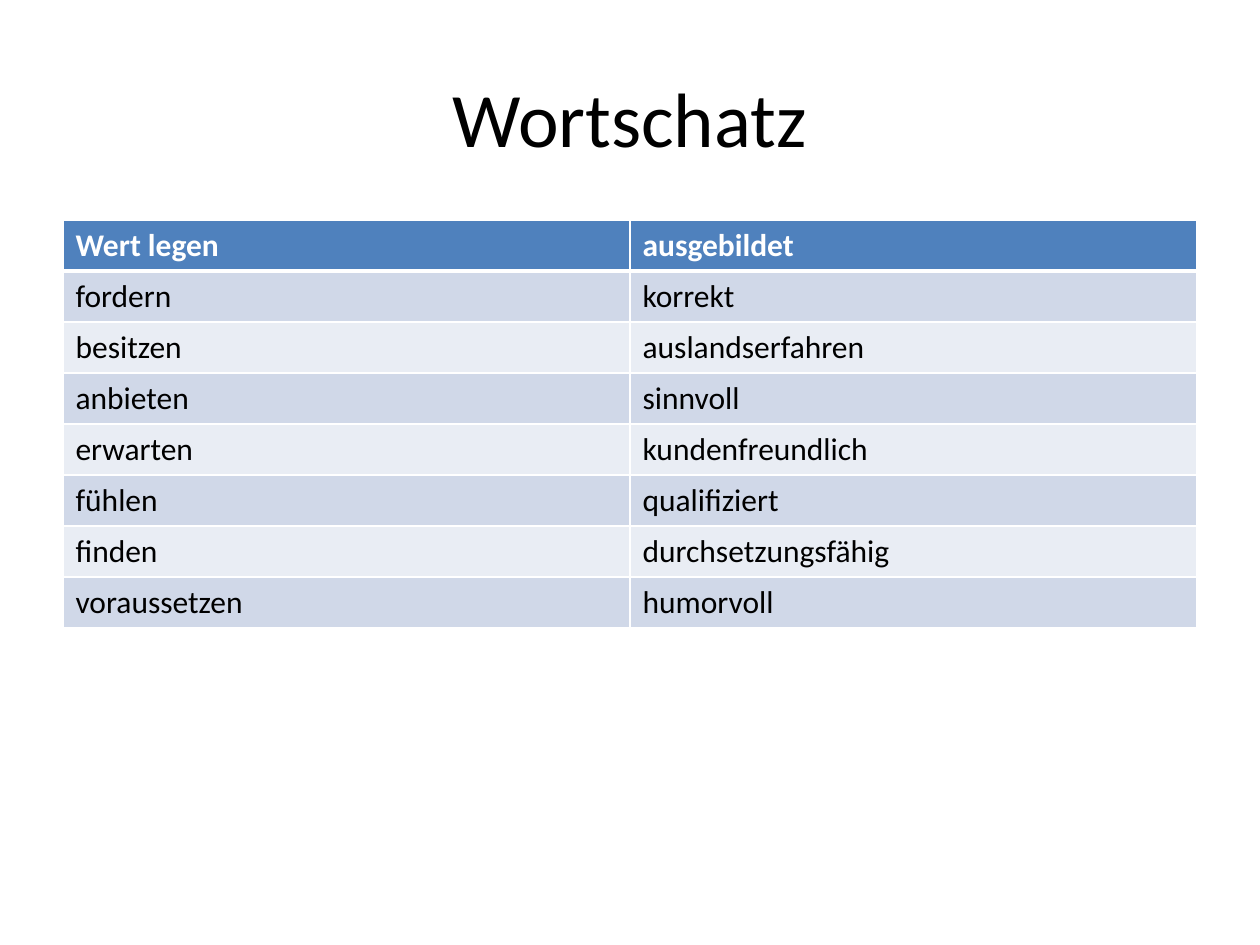
from dataclasses import dataclass

from lxml import etree
from pptx import Presentation
from pptx import util as u
from pptx.dml.color import RGBColor
from pptx.enum import text
from pptx.oxml.ns import qn

PX = 914400 / 126  # EMU per px


@dataclass(frozen=True)
class Theme:
    font: str = "Calibri"
    title_size: int = 44
    word_size: int = 18
    ink: str = "000000"
    paper: str = "FFFFFF"
    header: str = "4F81BD"
    bands: tuple = ("D0D8E8", "E9EDF4")
    rule: int = 1
    header_rule: int = 3


THEME = Theme()

WORDS = [
    ("Wert legen", "ausgebildet"),
    ("fordern", "korrekt"),
    ("besitzen", "auslandserfahren"),
    ("anbieten", "sinnvoll"),
    ("erwarten", "kundenfreundlich"),
    ("fühlen", "qualifiziert"),
    ("finden", "durchsetzungsfähig"),
    ("voraussetzen", "humorvoll"),
]


def px(length):
    return u.Emu(round(length * PX))


def write(frame, wording, *, size, color=THEME.ink, bold=False,
          align=text.PP_ALIGN.LEFT):
    paragraph = frame.paragraphs[0]
    paragraph.alignment = align
    run = paragraph.add_run()
    run.text = wording
    run.font.name = THEME.font
    run.font.size = u.Pt(size)
    run.font.bold = bold
    run.font.color.rgb = RGBColor.from_string(color)


def rule_cell(cell, widths):
    """Draw the borders; widths maps L, R, T, B to points, in that order."""
    properties = cell._tc.get_or_add_tcPr()
    for side, width in widths.items():
        line = etree.SubElement(properties, qn(f"a:ln{side}"), w=str(u.Pt(width)))
        fill = etree.SubElement(line, qn("a:solidFill"))
        etree.SubElement(fill, qn("a:srgbClr"), val=THEME.paper)


def add_title(slide, box, wording):
    heading = slide.shapes.add_textbox(*map(px, box))
    frame = heading.text_frame
    frame.word_wrap = True
    frame.vertical_anchor = text.MSO_ANCHOR.MIDDLE
    write(frame, wording, size=THEME.title_size, align=text.PP_ALIGN.CENTER)


def add_word_table(slide, box, words):
    left, top, width, height = map(px, box)
    table = slide.shapes.add_table(
        len(words), len(words[0]), left, top, width, height).table

    for row, pair in enumerate(words):
        is_header = row == 0
        # The thick rule is shared by the header and the first word row
        widths = {
            "L": THEME.rule,
            "R": THEME.rule,
            "T": THEME.header_rule if row == 1 else THEME.rule,
            "B": THEME.header_rule if is_header else THEME.rule,
        }
        band = THEME.header if is_header else THEME.bands[(row - 1) % 2]
        for column, word in enumerate(pair):
            cell = table.cell(row, column)
            rule_cell(cell, widths)
            cell.fill.solid()
            cell.fill.fore_color.rgb = RGBColor.from_string(band)
            write(cell.text_frame, word, size=THEME.word_size, bold=is_header,
                  color=THEME.paper if is_header else THEME.ink)


def main():
    deck = Presentation()
    deck.slide_width, deck.slide_height = px(1260), px(945)
    slide = deck.slides.add_slide(deck.slide_layouts[6])

    # Heading
    add_title(slide, (63, 38, 1134, 157), "Wortschatz")
    # Vocabulary
    add_word_table(slide, (63, 220, 1134, 408), WORDS)

    deck.save("out.pptx")


if __name__ == "__main__":
    main()
